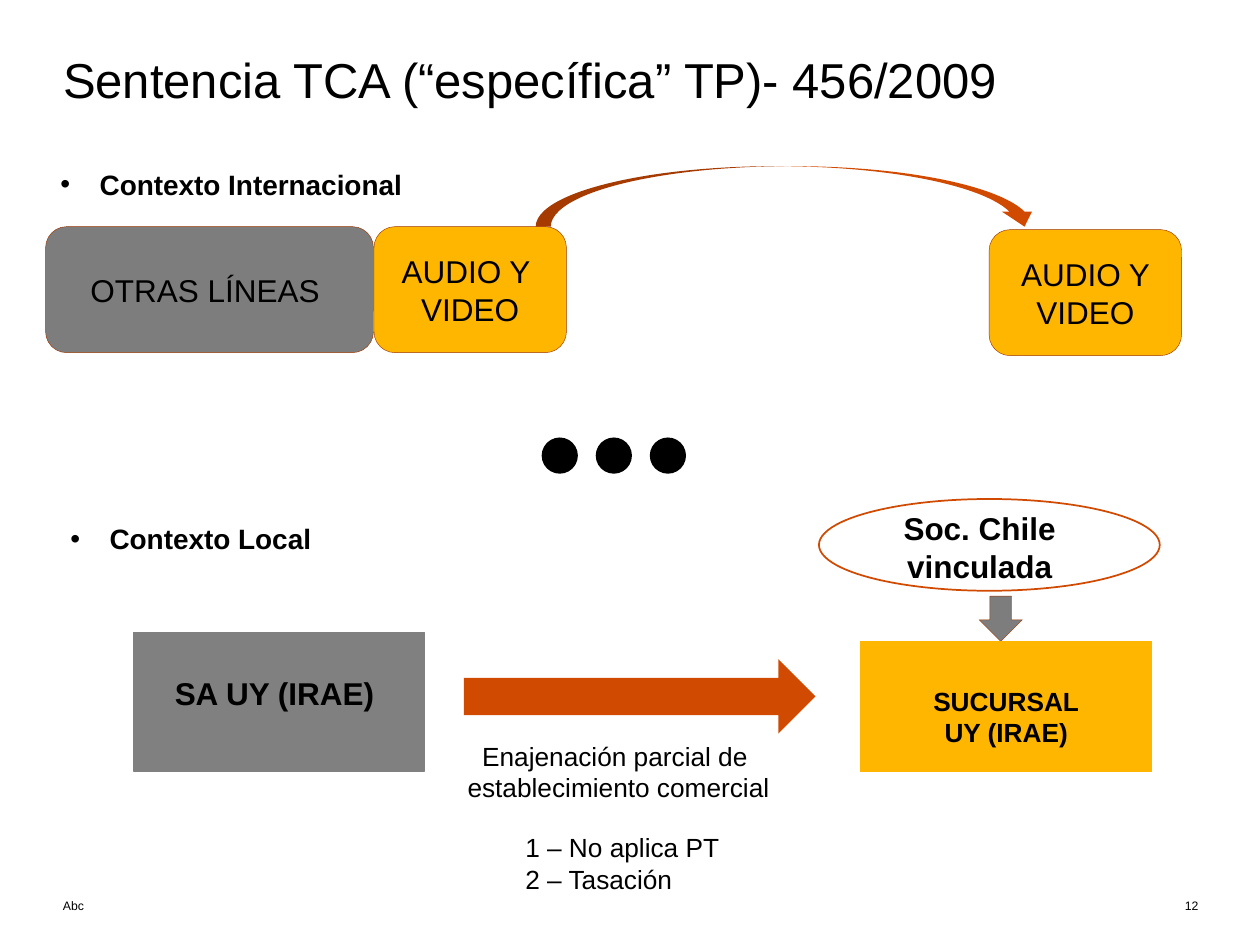
from lxml.etree import SubElement
from pptx import Presentation
from pptx.dml.color import RGBColor
from pptx.enum.shapes import MSO_SHAPE as Shape
from pptx.enum.text import MSO_ANCHOR as Anchor, PP_ALIGN as Align
from pptx.oxml.ns import qn
from pptx.util import Cm, Pt

BLACK, WHITE = "000000", "FFFFFF"
GREY, MID_GREY = "7D7D7D", "808080"
AMBER, ORANGE, RUST = "FFB600", "D04A02", "9A3701"


def color(hex_code):
    return RGBColor.from_string(hex_code)


def place(item, box):
    item.left, item.top, item.width, item.height = map(Cm, box)


def write(item, paragraphs, size, bold=False, align=Align.LEFT, anchor=Anchor.TOP,
          wrap=True, inset=0, after=0):
    frame = item.text_frame
    frame.word_wrap = wrap
    frame.vertical_anchor = anchor
    frame.margin_left = frame.margin_right = Cm(inset)
    frame.margin_top = frame.margin_bottom = Cm(inset / 2)
    for index, content in enumerate(paragraphs):
        paragraph = frame.add_paragraph() if index else frame.paragraphs[0]
        paragraph.text = content
        paragraph.alignment = align
        paragraph.space_before = Pt(0)
        paragraph.space_after = Pt(after)
        for run in paragraph.runs:
            run.font.name = "Arial"
            run.font.size = Pt(size)
            run.font.bold = bold
            run.font.color.rgb = color(BLACK)
    return frame


def add_figure(slide, kind, box, fill, line=None, width=0.25):
    figure = slide.shapes.add_shape(kind, *map(Cm, box))
    figure.shadow.inherit = False
    figure.fill.solid()
    figure.fill.fore_color.rgb = color(fill)
    if line:
        figure.line.color.rgb = color(line)
        figure.line.width = Pt(width)
    else:
        figure.line.fill.background()
    return figure


def add_label(slide, box, content, size, **style):
    label = slide.shapes.add_textbox(*map(Cm, box))
    write(label, [content], size, **style)
    return label


def add_business_line(slide, box, fill, paragraphs):
    business_line = add_figure(slide, Shape.ROUNDED_RECTANGLE, box, fill, RUST)
    write(business_line, paragraphs, 18, align=Align.CENTER, anchor=Anchor.MIDDLE, inset=0.25)


def add_heading(slide, left, top, content):
    heading = add_label(slide, (left, top, 10.39, 0.69), content, 16, bold=True, after=6)
    properties = heading.text_frame.paragraphs[0]._p.get_or_add_pPr()
    properties.set("marL", str(Cm(0.79)))
    properties.set("indent", str(Cm(-0.79)))
    SubElement(properties, qn("a:buFont")).set("typeface", "Arial")
    SubElement(properties, qn("a:buChar")).set("char", "•")


def add_title(slide, content):
    title = slide.shapes.title
    place(title, (1.27, 1.17, 22.86, 3.81))
    frame = write(title, [content], 28)
    frame.paragraphs[0].line_spacing = 0.85


def add_international_context(slide):
    add_heading(slide, 1.22, 3.38, "Contexto Internacional")
    add_business_line(slide, (0.92, 4.57, 6.61, 2.54), GREY, ["OTRAS LÍNEAS "])
    add_business_line(slide, (7.54, 4.57, 3.88, 2.54), AMBER, ["AUDIO Y ", "VIDEO"])
    add_figure(slide, Shape.CURVED_DOWN_ARROW, (10.8, 3.35, 10.16, 1.22), ORANGE)
    add_business_line(slide, (19.94, 4.63, 3.88, 2.54), AMBER, ["AUDIO Y VIDEO"])


def add_ellipsis(slide):
    for index in range(3):
        add_figure(slide, Shape.OVAL, (10.92 + 1.09 * index, 8.82, 0.73, 0.73), BLACK)


def add_local_context(slide):
    centred = dict(align=Align.CENTER, after=6.8)
    add_heading(slide, 1.42, 10.52, "Contexto Local")

    add_figure(slide, Shape.OVAL, (16.51, 10.06, 6.87, 1.85), WHITE, ORANGE, 1)
    add_label(slide, (17.5, 10.26, 4.5, 1.6), "Soc. Chile\nvinculada", 18, bold=True, **centred)
    add_figure(slide, Shape.DOWN_ARROW, (19.74, 12.02, 0.87, 0.91), GREY, RUST)

    add_figure(slide, Shape.RECTANGLE, (2.69, 12.75, 5.87, 2.79), MID_GREY, MID_GREY, 1)
    seller = add_figure(slide, Shape.RECTANGLE, (3.35, 13.59, 4.37, 1.5), MID_GREY, MID_GREY, 0.75)
    write(seller, ["SA UY (IRAE)"], 18, bold=True, **centred)

    branch = add_figure(slide, Shape.RECTANGLE, (17.35, 12.93, 5.87, 2.62), AMBER, AMBER, 0.75)
    write(branch, ["SUCURSAL\nUY (IRAE)"], 15, bold=True, **centred)
    branch.text_frame.margin_top = Cm(0.88)

    add_figure(slide, Shape.RIGHT_ARROW, (9.35, 13.29, 7.09, 1.5), ORANGE)
    add_label(slide, (8.81, 14.92, 7.32, 1.5),
              "Enajenación parcial de \nestablecimiento comercial", 15, **centred)
    add_label(slide, (10.59, 16.76, 5, 1.3), "1 – No aplica PT\n2 – Tasación", 15, after=6.8)


def add_footer(slide):
    add_label(slide, (1.27, 18.03, 11.05, 0.38), "Abc", 7, anchor=Anchor.BOTTOM)
    add_label(slide, (20.6, 18.03, 3.56, 0.38), "12", 7, anchor=Anchor.BOTTOM, align=Align.RIGHT)


def main():
    deck = Presentation()
    deck.slide_width, deck.slide_height = Cm(25.4), Cm(19.05)
    slide = deck.slides.add_slide(deck.slide_layouts[5])
    add_title(slide, "Sentencia TCA (“específica” TP)- 456/2009")
    add_international_context(slide)
    add_ellipsis(slide)
    add_local_context(slide)
    add_footer(slide)
    deck.save("out.pptx")


if __name__ == "__main__":
    main()
